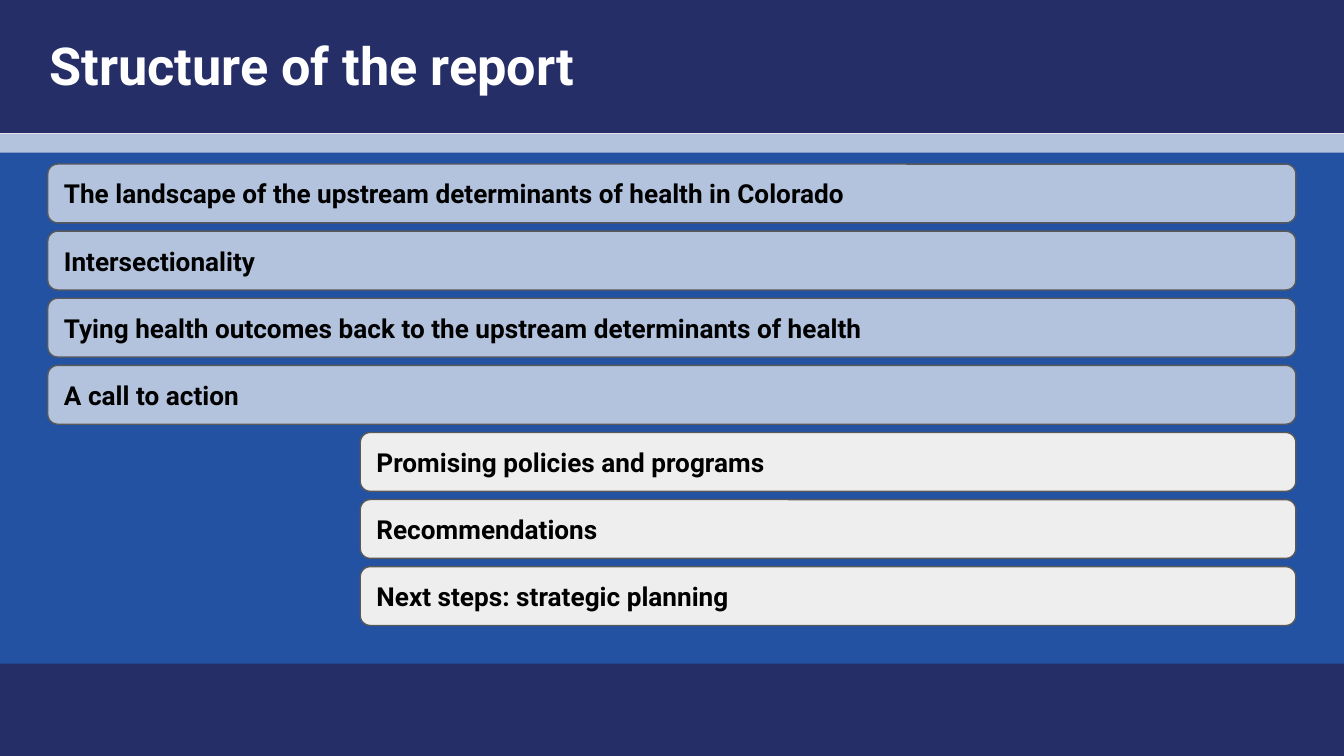
from pptx import Presentation
from pptx.dml.color import RGBColor
from pptx.enum.shapes import MSO_SHAPE
from pptx.enum.text import MSO_ANCHOR, PP_ALIGN
from pptx.util import Pt

COLORS = {
    "navy": "252E67",
    "blue": "2352A2",
    "pale": "B3C3DD",
    "gray": "EEEEEE",
    "outline": "595959",
    "white": "FFFFFF",
    "black": "000000",
}
WIDTH, HEIGHT = 720, 405
INSET = 7.2

# top, height, color
BANDS = [
    (75.6, 286.6, "blue"),
    (355.5, 49.5, "navy"),
    (0, 71.3, "navy"),
    (71.8, 10, "pale"),
]
SECTIONS = [
    "The landscape of the upstream determinants of health in Colorado",
    "Intersectionality",
    "Tying health outcomes back to the upstream determinants of health",
    "A call to action",
]
ACTION_STEPS = [
    "Promising policies and programs",
    "Recommendations",
    "Next steps: strategic planning",
]
SECTION_LEFT, STEP_LEFT, ROWS_RIGHT = 25.6, 193, 694.2
ROWS_TOP, ROW_PITCH, ROW_HEIGHT = 87.9, 35.95, 31.5


def rgb(name):
    return RGBColor.from_string(COLORS[name])


def set_text(sp, text, size, color, anchor):
    tf = sp.text_frame
    tf.word_wrap = True
    tf.vertical_anchor = anchor
    tf.margin_left = tf.margin_right = Pt(INSET)
    tf.margin_top = tf.margin_bottom = Pt(INSET)
    p = tf.paragraphs[0]
    p.text = text
    p.alignment = PP_ALIGN.LEFT
    p.font.name = "Roboto"
    p.font.size = Pt(size)
    p.font.bold = True
    p.font.color.rgb = rgb(color)


def add_filled(slide, kind, left, top, width, height, fill):
    sp = slide.shapes.add_shape(kind, Pt(left), Pt(top), Pt(width), Pt(height))
    sp.shadow.inherit = False
    sp.fill.solid()
    sp.fill.fore_color.rgb = rgb(fill)
    return sp


def add_band(slide, top, height, fill):
    sp = add_filled(slide, MSO_SHAPE.RECTANGLE, 0, top, WIDTH, height, fill)
    sp.line.fill.background()


def add_title(slide, text):
    sp = slide.shapes.add_textbox(Pt(19.4), Pt(10.8), Pt(671), Pt(45.4))
    set_text(sp, text, 28, "white", MSO_ANCHOR.TOP)


def add_row(slide, index, left, text, fill):
    """Add a rounded bar that reaches from left to the shared right edge."""
    sp = add_filled(slide, MSO_SHAPE.ROUNDED_RECTANGLE, left,
                    ROWS_TOP + index * ROW_PITCH, ROWS_RIGHT - left,
                    ROW_HEIGHT, fill)
    sp.adjustments[0] = 0.17
    sp.line.color.rgb = rgb("outline")
    sp.line.width = Pt(0.75)
    set_text(sp, text, 14, "black", MSO_ANCHOR.MIDDLE)


def main():
    prs = Presentation()
    prs.slide_width, prs.slide_height = Pt(WIDTH), Pt(HEIGHT)
    slide = prs.slides.add_slide(prs.slide_layouts[6])
    for band in BANDS:
        add_band(slide, *band)
    add_title(slide, "Structure of the report")
    for i, text in enumerate(SECTIONS):
        add_row(slide, i, SECTION_LEFT, text, "pale")
    for i, text in enumerate(ACTION_STEPS, start=len(SECTIONS)):
        add_row(slide, i, STEP_LEFT, text, "gray")
    prs.save("out.pptx")


if __name__ == "__main__":
    main()
